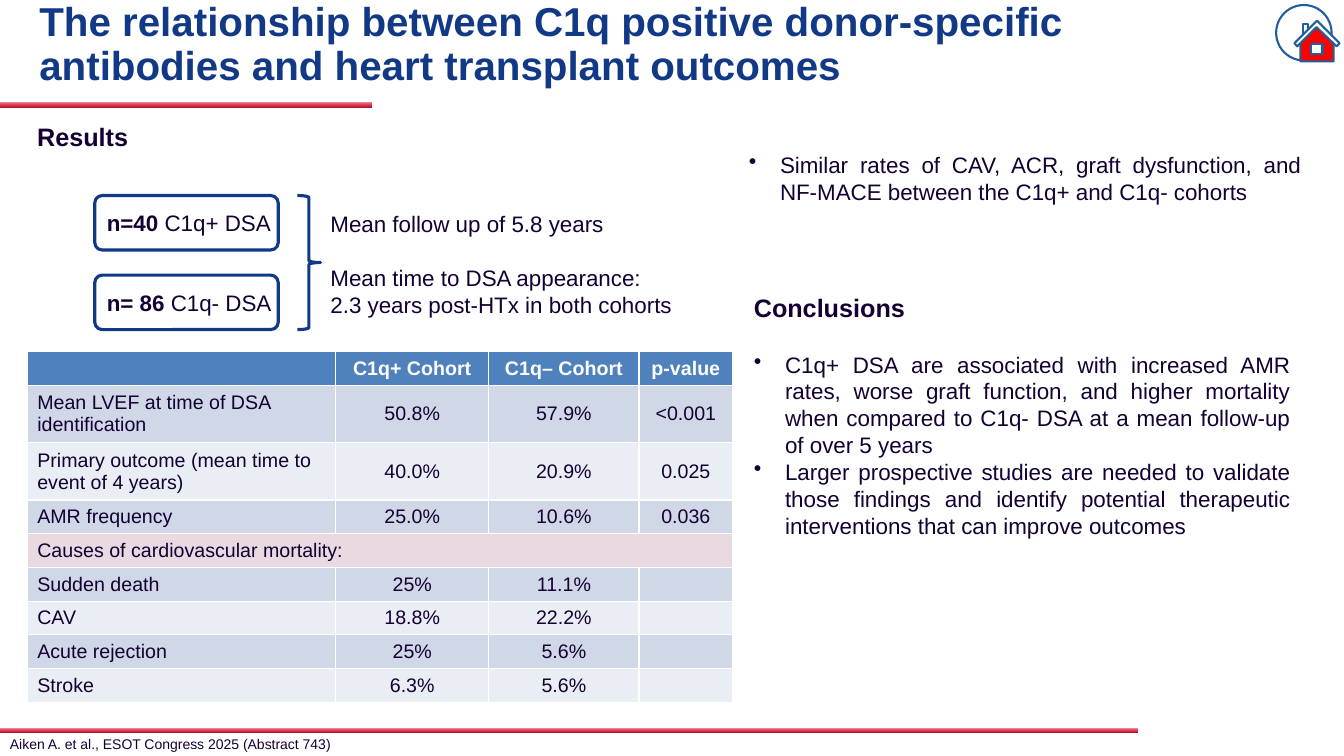
from copy import deepcopy

from lxml import etree
from pptx import Presentation
from pptx.dml.color import RGBColor
from pptx.enum.shapes import MSO_SHAPE
from pptx.enum.text import MSO_ANCHOR, PP_ALIGN
from pptx.oxml.ns import qn
from pptx.util import Inches, Pt

LEFT, CENTER, JUSTIFY = PP_ALIGN.LEFT, PP_ALIGN.CENTER, PP_ALIGN.JUSTIFY
TOP, MIDDLE = MSO_ANCHOR.TOP, MSO_ANCHOR.MIDDLE
RECTANGLE, ROUNDED = MSO_SHAPE.RECTANGLE, MSO_SHAPE.ROUNDED_RECTANGLE
OVAL, BRACE = MSO_SHAPE.OVAL, MSO_SHAPE.RIGHT_BRACE
GRID = Inches(0.1)
COLUMNS, ROWS = 133.33, 75
COLORS = {"title": "123986", "text": "140032", "outline": "113986", "icon": "215F9A",
          "roof": "FF0000", "white": "FFFFFF", "header": "4F81BD", "dark band": "D0D8E8",
          "light band": "E9EDF4", "section": "E9DAE2"}
BAR_STOPS = [(0, "A7142D"), (0.48, "E73855"), (1, "F08496")]
TABLE_COLUMNS = [30.6, 15.2, 14.9, 9.3]
TABLE_ROWS = [("C1q+ Cohort", "C1q– Cohort", "p-value")]
TABLE_ROWS = [
    ("", "C1q+ Cohort", "C1q– Cohort", "p-value"),
    ("Mean LVEF at time of DSA identification", "50.8%", "57.9%", "<0.001"),
    ("Primary outcome (mean time to event of 4 years)", "40.0%", "20.9%", "0.025"),
    ("AMR frequency", "25.0%", "10.6%", "0.036"),
    ("Causes of cardiovascular mortality:",),
    ("Sudden death", "25%", "11.1%", ""),
    ("CAV", "18.8%", "22.2%", ""),
    ("Acute rejection", "25%", "5.6%", ""),
    ("Stroke", "6.3%", "5.6%", ""),
]


def color(name):
    """Return the named colour."""
    return RGBColor.from_string(COLORS[name])


def grid(*lengths):
    """Turn grid lengths into slide units."""
    return [round(length * GRID) for length in lengths]


def add_run(paragraph, text, size, bold=False, name="text"):
    """Add a formatted run to a paragraph."""
    font = paragraph.add_run().font
    paragraph.runs[-1].text = text
    for key, value in {"name": "Arial", "size": Pt(size), "bold": bold}.items():
        setattr(font, key, value)
    font.color.rgb = color(name)


def add_bullet(paragraph):
    """Give a paragraph a hanging round bullet."""
    properties = paragraph._p.get_or_add_pPr()
    for key, value in {"marL": Inches(0.31), "indent": -Inches(0.31)}.items():
        properties.set(key, str(value))
    etree.SubElement(properties, qn("a:buChar")).set("char", "•")


def add_text(slide, box, lines, size, bold=False, bullets=False, gaps=None):
    """Add a wrapped text box; gaps maps a line number to its space before."""
    frame = slide.shapes.add_textbox(*grid(*box)).text_frame
    frame.word_wrap = True
    for index, line in enumerate(lines):
        paragraph = frame.add_paragraph() if index else frame.paragraphs[0]
        if bullets:
            add_bullet(paragraph)
        paragraph.alignment = JUSTIFY if bullets else LEFT
        if gaps and index in gaps:
            paragraph.space_before = Pt(gaps[index])
        add_run(paragraph, line, size, bold)


def style_shape(shape, line=None, width=1.5, fill=None):
    """Set the outline and fill of a shape and drop its shadow."""
    shape.shadow.inherit = False
    if fill:
        shape.fill.solid()
        shape.fill.fore_color.rgb = color(fill)
    else:
        shape.fill.background()
    if line:
        shape.line.color.rgb = color(line)
        shape.line.width = Pt(width)
    else:
        shape.line.fill.background()


def add_shape(slide, kind, box, **style):
    """Add a styled preset shape."""
    shape = slide.shapes.add_shape(kind, *grid(*box))
    style_shape(shape, **style)
    return shape


def add_bar(slide, box):
    """Add a red gradient bar."""
    bar = add_shape(slide, RECTANGLE, box)
    bar.fill.gradient()
    bar.fill.gradient_angle = 90
    stops = bar._element.spPr.find(qn("a:gradFill")).find(qn("a:gsLst"))
    stops.append(deepcopy(stops[-1]))
    for stop, (position, value) in zip(bar.fill.gradient_stops, BAR_STOPS):
        stop.position = position
        stop.color.rgb = RGBColor.from_string(value)


def add_title(slide, box, text):
    """Move and format the title placeholder."""
    title = slide.shapes.title
    for key, value in zip(("left", "top", "width", "height"), grid(*box)):
        setattr(title, key, value)
    frame = title.text_frame
    for key in ("margin_left", "margin_top", "margin_right", "margin_bottom"):
        setattr(frame, key, 0)
    frame.vertical_anchor = MIDDLE
    paragraph = frame.paragraphs[0]
    paragraph.alignment = LEFT
    paragraph.line_spacing = 0.9
    add_run(paragraph, text, 28.8, True, "title")


def add_cohorts(slide, box):
    """Draw the two cohorts, their brace and the shared follow-up facts."""
    left, top, width, height = box
    node_height = 5.4
    cohorts = [("n=40 ", "C1q+ DSA"), ("n= 86 ", "C1q- DSA")]
    for index, (count, cohort) in enumerate(cohorts):
        node_top = top + index * (height - node_height)
        node = add_shape(slide, ROUNDED, (left, node_top, 18.2, node_height),
                         line="outline", width=2.25)
        node.adjustments[0] = 0.135
        frame = node.text_frame
        frame.word_wrap = False
        frame.vertical_anchor = MIDDLE
        paragraph = frame.paragraphs[0]
        paragraph.alignment = LEFT
        add_run(paragraph, count, 16, True)
        add_run(paragraph, cohort, 16)
    add_shape(slide, BRACE, (left + 20.1, top, 2.3, height), line="outline", width=2.25)
    facts = ["Mean follow up of 5.8 years", "Mean time to DSA appearance:",
             "2.3 years post-HTx in both cohorts"]
    add_text(slide, (left + 22.4, top + 1, width - 22.4, 11.8), facts, 16, gaps={1: 19})


def add_outcomes_table(slide, box):
    """Add the outcomes table with banded rows and one merged section row."""
    table = slide.shapes.add_table(len(TABLE_ROWS), len(TABLE_COLUMNS), *grid(*box)).table
    for column, width in zip(table.columns, TABLE_COLUMNS):
        column.width = grid(width)[0]
    for row_index, values in enumerate(TABLE_ROWS):
        table.rows[row_index].height = grid(5.6 if row_index in (1, 2) else 3.35)[0]
        is_section = len(values) == 1
        if is_section:
            table.cell(row_index, 0).merge(table.cell(row_index, len(TABLE_COLUMNS) - 1))
        band = "dark band" if row_index % 2 else "light band"
        fill = "header" if row_index == 0 else "section" if is_section else band
        for column_index, value in enumerate(values):
            cell = table.cell(row_index, column_index)
            cell.fill.solid()
            cell.fill.fore_color.rgb = color(fill)
            cell.vertical_anchor = MIDDLE
            paragraph = cell.text_frame.paragraphs[0]
            paragraph.alignment = CENTER if column_index else LEFT
            if value:
                is_header = row_index == 0
                add_run(paragraph, value, 14, is_header, "white" if is_header else "text")
            else:
                etree.SubElement(paragraph._p, qn("a:endParaRPr")).set("sz", "1400")


def add_outline(slide, origin, points, fill):
    """Add a closed outline from points given in tenths of a grid step."""
    builder = slide.shapes.build_freeform(*points[0], scale=GRID / 10)
    builder.add_line_segments(points[1:], close=True)
    style_shape(builder.convert_to_shape(*grid(*origin)), line="icon", fill=fill)


def add_home_icon(slide, box):
    """Draw a house in front of a ring."""
    left, top, width, height = box
    add_shape(slide, OVAL, (left, top, width, height), line="icon")
    add_shape(slide, RECTANGLE, (left + 2.7, top + 1.9, 0.5, 1.4), line="icon", fill="white")
    walls = [(41, 20), (57, 34), (57, 56), (24, 56), (24, 34)]
    add_outline(slide, (left, top), walls, "roof")
    add_shape(slide, RECTANGLE, (left + 3.5, top + 3.9, 1.1, 1), line="icon", fill="white")
    eaves = [(40, 16), (41, 16), (63, 38), (60, 41), (40, 22), (21, 41), (18, 38)]
    add_outline(slide, (left, top), eaves, "white")


def add_conclusions(slide, box):
    """Add the conclusions heading and its bullets."""
    left, top, width, height = box
    add_text(slide, (left, top, width, 3.9), ["Conclusions"], 18, bold=True)
    findings = [
        "C1q+ DSA are associated with increased AMR rates, worse graft function, and higher "
        "mortality when compared to C1q- DSA at a mean follow-up of over 5 years",
        "Larger prospective studies are needed to validate those findings and identify "
        "potential therapeutic interventions that can improve outcomes"]
    add_text(slide, (left, top + 5.8, width, height - 5.8), findings, 16, bullets=True)


def main():
    """Build the slide and save it."""
    presentation = Presentation()
    presentation.slide_width, presentation.slide_height = grid(COLUMNS, ROWS)
    slide = presentation.slides.add_slide(presentation.slide_layouts[5])
    add_title(slide, (3.9, 0, 120, 9), "The relationship between C1q positive donor-specific "
              "antibodies and heart transplant outcomes")
    add_bar(slide, (0, 10.1, 36.9, 0.6))
    add_bar(slide, (0, 72.2, 112.9, 0.5))
    add_text(slide, (2.7, 11.5, 56.8, 3.9), ["Results"], 18, bold=True)
    add_cohorts(slide, (9.4, 19.4, 62.4, 13.3))
    add_outcomes_table(slide, (2.7, 34.9, 70, 34.9))
    add_text(slide, (73.3, 14.5, 56.8, 6.4),
             ["Similar rates of CAV, ACR, graft dysfunction, and NF-MACE between the C1q+ and "
              "C1q- cohorts"], 16, bullets=True)
    add_conclusions(slide, (73.8, 28.5, 55.2, 25.9))
    add_home_icon(slide, (126.6, 0.5, 5.5, 5.5))
    add_text(slide, (0, 72.5, 66.7, 2.7),
             ["Aiken A. et al., ESOT Congress 2025 (Abstract 743)"], 10)
    presentation.save("out.pptx")


if __name__ == "__main__":
    main()
